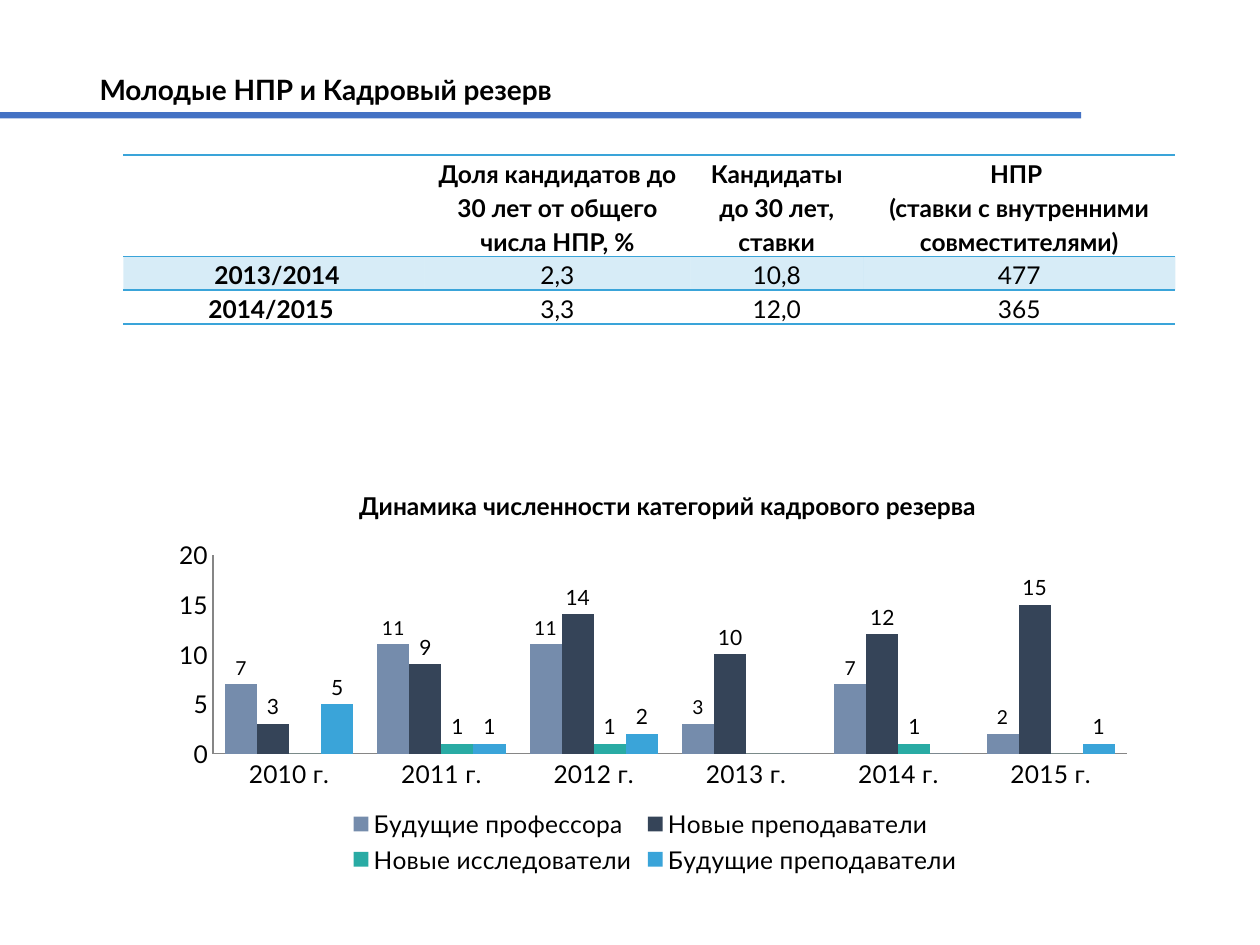
import pptx
import pptx.util
import pptx.oxml
import pptx.oxml.ns
import pptx.chart.data
import pptx.dml.color
import pptx.enum.chart
import pptx.enum.shapes
import pptx.enum.text

Inches = pptx.util.Inches
Pt = pptx.util.Pt
qn = pptx.oxml.ns.qn
CENTER = pptx.enum.text.PP_ALIGN.CENTER
MIDDLE = pptx.enum.text.MSO_ANCHOR.MIDDLE
BOTTOM = pptx.enum.text.MSO_ANCHOR.BOTTOM
COLORS = {
    "bar": "4472C4", "text": "000000", "accent": "3AA4D9", "axis": "868686",
    "professors": "758CAC", "teachers": "354458", "researchers": "29ABA4",
}
PLAIN_TABLE = "{2D5ABB26-0587-4C30-8999-92F81FD0307C}"


def rgb(name):
    return pptx.dml.color.RGBColor.from_string(COLORS[name])


def set_font(font, size, bold=False):
    for name, value in {"name": "Lato", "size": Pt(size), "bold": bold}.items():
        setattr(font, name, value)
    font.color.rgb = rgb("text")


deck = pptx.Presentation()
deck.slide_width, deck.slide_height = Inches(10), Inches(7.5)
page = deck.slides.add_slide(deck.slide_layouts[5])

bar = page.shapes.add_shape(
    pptx.enum.shapes.MSO_SHAPE.RECTANGLE, 0, Inches(0.89), Inches(8.58), Inches(0.05))
bar.shadow.inherit = False
bar.fill.solid()
bar.fill.fore_color.rgb = rgb("bar")
bar.line.fill.background()

title = page.shapes.title
place = {"left": 0.69, "top": 0.52, "width": 7.89, "height": 0.37}
for name, value in place.items():
    setattr(title, name, Inches(value))
title.text_frame.text = "Молодые НПР и Кадровый резерв"
title.text_frame.vertical_anchor = MIDDLE
title.text_frame.auto_size = pptx.enum.text.MSO_AUTO_SIZE.NONE
title.text_frame.paragraphs[0].alignment = pptx.enum.text.PP_ALIGN.LEFT
set_font(title.text_frame.paragraphs[0].runs[0].font, 16, True)

rows = [
    ["", "Доля кандидатов до 30 лет от общего числа НПР, %",
     "Кандидаты до 30 лет, ставки", "НПР \n(ставки с внутренними совместителями)"],
    [" 2013/2014", "2,3", "10,8", "477"],
    ["2014/2015 ", "3,3", "12,0", "365"],
]
frame = page.shapes.add_table(3, 4, Inches(0.98), Inches(1.23), Inches(8.35), Inches(1.09))
table = frame.table
table.first_row = table.horz_banding = False
table._tbl.tblPr.find(qn("a:tableStyleId")).text = PLAIN_TABLE
for column, width in zip(table.columns, [2.39, 2.11, 1.37, 2.48]):
    column.width = Inches(width)
for row, height in zip(table.rows, [0.67, 0.21, 0.21]):
    row.height = Inches(height)
borders = {0: ["lnT", "lnB"], 1: ["lnT"], 2: ["lnB"]}
cell_format = {
    "margin_left": Inches(0.07), "margin_right": Inches(0.07),
    "margin_top": 0, "margin_bottom": 0,
}
for row_index, texts in enumerate(rows):
    for column_index, text in enumerate(texts):
        cell = table.cell(row_index, column_index)
        for name, value in cell_format.items():
            setattr(cell, name, value)
        cell.vertical_anchor = BOTTOM if row_index else MIDDLE
        cell.text = text
        for para in cell.text_frame.paragraphs:
            para.alignment = CENTER
            para.line_spacing = 1.15
            set_font(para.font, 14)
            for span in para.runs:
                set_font(span.font, 14, row_index == 0 or column_index == 0)
        properties = cell._tc.get_or_add_tcPr()
        for side in borders[row_index]:
            properties.append(pptx.oxml.parse_xml(
                f'<a:{side} {pptx.oxml.ns.nsdecls("a")} w="12700"><a:solidFill>'
                f'<a:srgbClr val="{COLORS["accent"]}"/></a:solidFill></a:{side}>'))
        if row_index == 1:
            cell.fill.solid()
            cell.fill.fore_color.rgb = rgb("accent")
            tint = properties.find(qn("a:solidFill")).find(qn("a:srgbClr"))
            tint.append(pptx.oxml.parse_xml(
                f'<a:alpha {pptx.oxml.ns.nsdecls("a")} val="20000"/>'))
        else:
            cell.fill.background()

box = page.shapes.add_textbox(Inches(1.3), Inches(3.73), Inches(7.01), Inches(0.45))
box.text_frame.word_wrap = True
para = box.text_frame.paragraphs[0]
para.alignment = CENTER
para.line_spacing = 1.5
indents = para._p.get_or_add_pPr()
indents.set("marL", str(Inches(0.5)))
indents.set("indent", str(Inches(0.49)))
span = para.add_run()
span.text = "Динамика численности категорий кадрового резерва"
set_font(span.font, 14, True)

series_rows = [
    ("Будущие профессора", [7, 11, 11, 3, 7, 2], "professors", 11),
    ("Новые преподаватели", [3, 9, 14, 10, 12, 15], "teachers", 12),
    ("Новые исследователи", [0, 1, 1, 0, 1, 0], "researchers", 12),
    ("Будущие преподаватели", [5, 1, 2, 0, 0, 1], "accent", 12),
]
data = pptx.chart.data.CategoryChartData()
data.categories = [f"{year} г." for year in range(2010, 2016)]
for name, values, color, size in series_rows:
    data.add_series(name, values)
chart = page.shapes.add_chart(
    pptx.enum.chart.XL_CHART_TYPE.COLUMN_CLUSTERED,
    Inches(1.3), Inches(4.21), Inches(7.8), Inches(2.77), data).chart
set_font(chart.font, 14)
chart.has_title = False
chart.has_legend = True
chart.legend.position = pptx.enum.chart.XL_LEGEND_POSITION.BOTTOM
chart.legend.include_in_layout = False
plot = chart.plots[0]
plot.gap_width = 75
plot.overlap = 0
plot.vary_by_categories = False
for series, (name, values, color, size) in zip(plot.series, series_rows):
    series.format.fill.solid()
    series.format.fill.fore_color.rgb = rgb(color)
    labels = series.data_labels
    labels.show_value = True
    labels.position = pptx.enum.chart.XL_LABEL_POSITION.OUTSIDE_END
    labels.number_format = "0;;"
    labels.number_format_is_linked = False
    set_font(labels.font, size)
for axis in (chart.category_axis, chart.value_axis):
    axis.major_tick_mark = pptx.enum.chart.XL_TICK_MARK.NONE
    axis.has_major_gridlines = False
    axis.format.line.color.rgb = rgb("axis")
    axis.format.line.width = Pt(0.75)
scale = {"minimum_scale": 0, "maximum_scale": 20, "major_unit": 5}
for name, value in scale.items():
    setattr(chart.value_axis, name, value)

area = chart._chartSpace.chart.plotArea
for old in area.findall(qn("c:layout")):
    area.remove(old)
inner = {"x": 0.05, "y": 0.07, "w": 0.93, "h": 0.57}
sizes = "".join(f'<c:{side} val="{share}"/>' for side, share in inner.items())
area.insert(0, pptx.oxml.parse_xml(
    f'<c:layout {pptx.oxml.ns.nsdecls("c")}><c:manualLayout><c:layoutTarget val="inner"/>'
    f'<c:xMode val="edge"/><c:yMode val="edge"/>{sizes}</c:manualLayout></c:layout>'))

deck.save("out.pptx")
